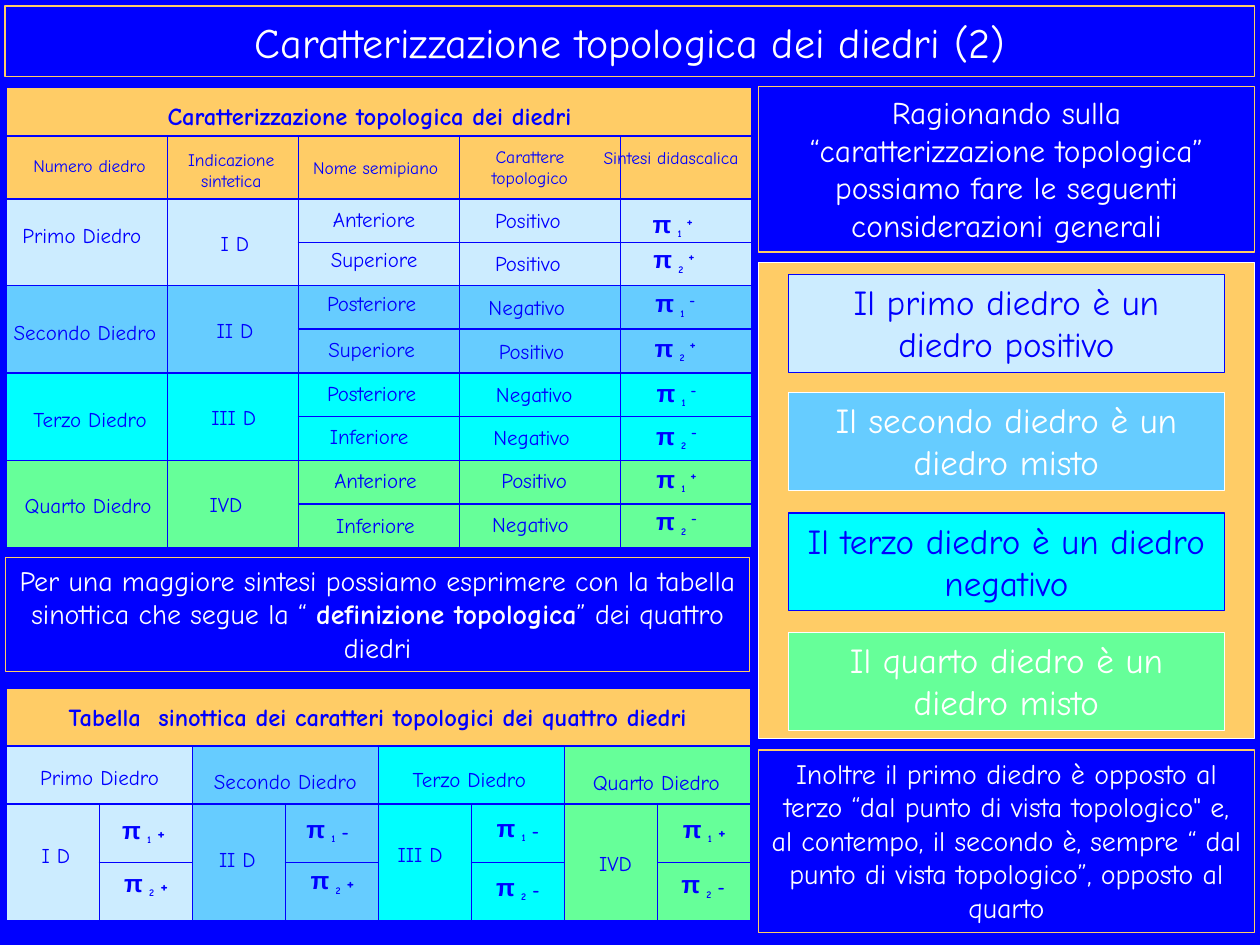
from lxml import etree
from pptx import Presentation
from pptx.dml.color import RGBColor
from pptx.enum.shapes import MSO_SHAPE
from pptx.enum.text import MSO_ANCHOR, MSO_AUTO_SIZE, PP_ALIGN
from pptx.oxml.ns import qn
from pptx.util import Pt

RECTANGLE = MSO_SHAPE.RECTANGLE
TOP, MIDDLE = MSO_ANCHOR.TOP, MSO_ANCHOR.MIDDLE
GROW = MSO_AUTO_SIZE.SHAPE_TO_FIT_TEXT
CENTER = PP_ALIGN.CENTER

BLUE = RGBColor(0x00, 0x00, 0xFF)
WHITE = RGBColor(0xFF, 0xFF, 0xFF)
ORANGE = RGBColor(0xFF, 0xCC, 0x66)
PALE_BLUE = RGBColor(0xCC, 0xEC, 0xFF)
SKY_BLUE = RGBColor(0x66, 0xCC, 0xFF)
CYAN = RGBColor(0x00, 0xFF, 0xFF)
GREEN = RGBColor(0x66, 0xFF, 0x99)
DIHEDRAL_FILLS = [PALE_BLUE, SKY_BLUE, CYAN, GREEN]

FONT, PI_FONT = "Comic Neue", "Arial"
NAMES = ["Primo Diedro", "Secondo Diedro", "Terzo Diedro", "Quarto Diedro"]
CODES = ["I D", "II D", "III D", "IVD"]
SIGNS = ["++", "-+", "--", "+-"]  # signs of π1 and π2 in each dihedral
NAME_WIDTH, CODE_WIDTH, PI_WIDTH = 104, 47, 52

# Label positions: (horizontal centre, top) from the corner of the table
HEADERS = [
    ("Numero diedro", 47.5, 35.3, 89),
    ("Indicazione sintetica", 128.5, 31.7, 71),
    ("Nome semipiano", 211, 36.7, 98),
    ("Carattere topologico", 299.2, 30.2, 90),
    ("Sintesi didascalica", 379.8, 31, 92),
]
FULL_NAME_SPOTS = [(43.2, 74.1), (45, 129.6), (47.9, 179.3), (46.8, 228.2)]
FULL_CODE_SPOTS = [(130.7, 78.5), (130.7, 128.1), (130, 177.8), (125.6, 227.5)]
HALF_PLANES = [
    ("Anteriore", 210.2, 64.8), ("Superiore", 210.2, 87.8),
    ("Posteriore", 208.8, 113), ("Superiore", 208.8, 138.9),
    ("Posteriore", 208.8, 164.1), ("Inferiore", 207.4, 188.6),
    ("Anteriore", 211, 213.8), ("Inferiore", 211, 239.7),
]
CHARACTER_SPOTS = [(298.1, 65.5), (298.1, 90), (297.4, 115.2), (300.2, 140.4),
                   (301.7, 164.9), (300.2, 189.3), (301.7, 213.8), (299.5, 239)]
FULL_PI_SPOTS = [(380.9, 66.2), (381.6, 86.4), (382.3, 111.6), (382.3, 136.8),
                 (383, 162.7), (383, 187.2), (383, 211.7), (383, 236.1)]
SHORT_NAME_SPOTS = [(53.3, 40.3), (159.5, 42.5), (264.6, 41.1), (371.5, 43.2)]
SHORT_CODE_SPOTS = [(28.4, 85), (132.1, 87.1), (236.5, 84.3), (348.1, 89.3)]
SHORT_PI_SPOTS = [(78.5, 69.1), (79.9, 99.4), (183.6, 68.4), (186.4, 97.9),
                  (292.3, 67.7), (292.3, 101.5), (398.9, 68.4), (398.2, 100.1)]


def add_run(paragraph, text, size, color, bold=False, font=FONT, baseline=0):
    run = paragraph.add_run()
    run.text = text
    run.font.size, run.font.name, run.font.bold = Pt(size), font, bold
    run.font.color.rgb = color
    if baseline:
        run.font._element.set("baseline", str(baseline * 1000))


def centred_paragraph(shape, anchor=TOP):
    frame = shape.text_frame
    frame.word_wrap = True
    frame.auto_size = GROW
    frame.vertical_anchor = anchor
    paragraph = frame.paragraphs[0]
    paragraph.alignment = CENTER
    return paragraph


def outline(shape, color):
    shape.line.color.rgb = color
    shape.line.width = Pt(0.75)


def add_title(slide, box):
    title = slide.shapes.title
    title.left, title.top, title.width, title.height = map(Pt, box)
    outline(title, ORANGE)
    frame = title.text_frame
    frame.vertical_anchor = MIDDLE
    frame.paragraphs[0].alignment = CENTER
    add_run(frame.paragraphs[0], "Caratterizzazione topologica dei diedri (2)", 24, WHITE)


def add_box(slide, box, line, fill=None, runs=(), size=16, color=WHITE):
    """Outlined rectangle; runs are (text, bold) pairs."""
    shape = slide.shapes.add_shape(RECTANGLE, *map(Pt, box))
    shape.shadow.inherit = False
    if fill is None:
        shape.fill.background()
    else:
        shape.fill.solid()
        shape.fill.fore_color.rgb = fill
    outline(shape, line)
    if runs:
        paragraph = centred_paragraph(shape)
        for text, bold in runs:
            add_run(paragraph, text, size, color, bold)


def label_paragraph(slide, corner, spot, width, size):
    left, top = corner[0] + spot[0] - width / 2, corner[1] + spot[1]
    height = size * 1.2 + 7.2
    return centred_paragraph(
        slide.shapes.add_textbox(Pt(left), Pt(top), Pt(width), Pt(height)))


def add_label(slide, corner, text, spot, width, size=12, bold=False):
    add_run(label_paragraph(slide, corner, spot, width, size), text, size, BLUE, bold)


def add_pi(slide, corner, index, sign, spot, sign_size, sign_baseline):
    paragraph = label_paragraph(slide, corner, spot, PI_WIDTH, 14)
    add_run(paragraph, "π", 14, BLUE, True, PI_FONT)
    add_run(paragraph, " ", 10, BLUE, True)
    add_run(paragraph, str(index), 10, BLUE, True, baseline=-25)
    add_run(paragraph, " " + sign, sign_size, BLUE, True, baseline=sign_baseline)


def format_cell(cell, fill):
    cell.fill.solid()
    cell.fill.fore_color.rgb = fill
    cell.margin_top = cell.margin_bottom = 0
    # A small end mark keeps empty rows from growing
    etree.SubElement(cell.text_frame.paragraphs[0]._p, qn("a:endParaRPr"), sz="800")
    properties = cell._tc.get_or_add_tcPr()
    for position, side in enumerate(("a:lnL", "a:lnR", "a:lnT", "a:lnB")):
        border = etree.Element(qn(side), w=str(Pt(1)))
        solid = etree.SubElement(border, qn("a:solidFill"))
        etree.SubElement(solid, qn("a:srgbClr"), val=str(BLUE))
        properties.insert(position, border)


def add_grid(slide, corner, widths, heights, fill_at, merges):
    """Table coloured by fill_at(row, column); merges are (row, column, row, column)."""
    table = slide.shapes.add_table(len(heights), len(widths), *map(
        Pt, (*corner, sum(widths), sum(heights)))).table
    for column, width in zip(table.columns, widths):
        column.width = Pt(width)
    for r, height in enumerate(heights):
        table.rows[r].height = Pt(height)
        for c in range(len(widths)):
            format_cell(table.cell(r, c), fill_at(r, c))
    for r1, c1, r2, c2 in merges:
        table.cell(r1, c1).merge(table.cell(r2, c2))


def add_full_table(slide, corner):
    merges = [(0, 0, 0, 4)] + [(r, c, r + 1, c) for r in range(2, 10, 2) for c in (0, 1)]
    add_grid(slide, corner, [92, 75, 92, 92, 75], [28, 36, 25, 24.5] + [25] * 6,
             lambda r, c: ORANGE if r < 2 else DIHEDRAL_FILLS[r // 2 - 1], merges)
    add_label(slide, corner, "Caratterizzazione topologica dei diedri",
              (207.7, 4.3), 388, 14, True)
    for text, x, y, width in HEADERS:
        add_label(slide, corner, text, (x, y), width, 10)
    for name, code, name_spot, code_spot in zip(
            NAMES, CODES, FULL_NAME_SPOTS, FULL_CODE_SPOTS):
        add_label(slide, corner, name, name_spot, NAME_WIDTH)
        add_label(slide, corner, code, code_spot, CODE_WIDTH)
    for i, sign in enumerate("".join(SIGNS)):
        half_plane, x, y = HALF_PLANES[i]
        add_label(slide, corner, half_plane, (x, y), 88)
        character = "Positivo" if sign == "+" else "Negativo"
        add_label(slide, corner, character, CHARACTER_SPOTS[i], 86)
        add_pi(slide, corner, i % 2 + 1, sign, FULL_PI_SPOTS[i], 14, 30)


def add_short_table(slide, corner):
    merges = [(0, 0, 0, 7)]
    for c in range(0, 8, 2):
        merges += [(1, c, 1, c + 1), (2, c, 3, c)]
    add_grid(slide, corner, [53.2] * 8, [33.25] * 4,
             lambda r, c: DIHEDRAL_FILLS[c // 2] if r else ORANGE, merges)
    add_label(slide, corner, "Tabella  sinottica dei caratteri topologici dei quattro diedri",
              (212.4, 4.3), 425, 14, True)
    for name, code, name_spot, code_spot in zip(
            NAMES, CODES, SHORT_NAME_SPOTS, SHORT_CODE_SPOTS):
        add_label(slide, corner, name, name_spot, NAME_WIDTH)
        add_label(slide, corner, code, code_spot, CODE_WIDTH)
    for i, sign in enumerate("".join(SIGNS)):
        add_pi(slide, corner, i % 2 + 1, sign, SHORT_PI_SPOTS[i], 10, 0)


def add_conclusions(slide, box):
    left, top, width, _ = box
    add_box(slide, box, WHITE, ORANGE)
    conclusions = [("Il primo diedro è un diedro positivo", BLUE, 7.2),
                   ("Il secondo diedro è un diedro misto", WHITE, 74.4),
                   ("Il terzo diedro è un diedro negativo", BLUE, 143.3),
                   ("Il quarto diedro è un diedro misto", WHITE, 211.7)]
    for (text, color, offset), fill in zip(conclusions, DIHEDRAL_FILLS):
        add_box(slide, (left + 17, top + offset, width - 34, 56), color, fill,
                [(text, False)], 20, color)


def main():
    presentation = Presentation()
    presentation.slide_width, presentation.slide_height = Pt(720), Pt(540)
    slide = presentation.slides.add_slide(presentation.slide_layouts[5])
    slide.background.fill.solid()
    slide.background.fill.fore_color.rgb = BLUE
    add_title(slide, (2.9, 3.4, 714.2, 40.5))
    add_full_table(slide, (3.6, 49.7))
    add_box(slide, (3.3, 318.4, 425, 65.5), ORANGE, runs=[
        ("Per una maggiore sintesi possiamo esprimere con la tabella sinottica"
         " che segue la “ ", False),
        ("definizione topologica", True), ("” dei quattro diedri", False)])
    add_short_table(slide, (3.6, 393.1))
    add_box(slide, (433.4, 49.5, 283.5, 94.5), ORANGE, size=18, runs=[
        ("Ragionando sulla “caratterizzazione topologica” possiamo fare"
         " le seguenti considerazioni generali", False)])
    add_box(slide, (433.4, 428.6, 283.5, 104.4), ORANGE, runs=[
        ("Inoltre il primo diedro è opposto al terzo “dal punto di vista topologico\" e,"
         " al contempo, il secondo è, sempre “ dal punto di vista topologico”,"
         " opposto al quarto", False)])
    add_conclusions(slide, (433.4, 149.8, 283.5, 272.2))
    presentation.save("out.pptx")


if __name__ == "__main__":
    main()
